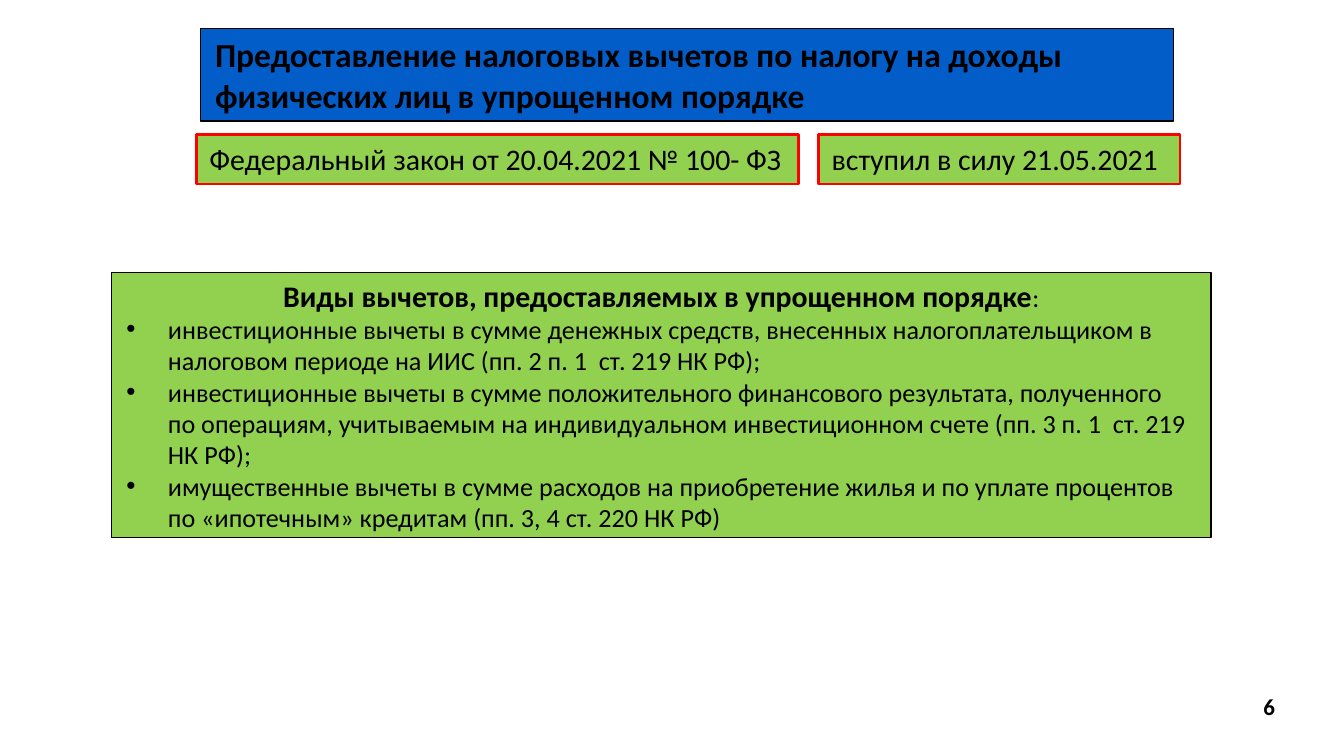
import pptx
import pptx.dml.color
import pptx.enum.shapes
import pptx.enum.text
import pptx.util
from lxml import etree
from pptx.oxml.ns import qn

Inches = pptx.util.Inches
Pt = pptx.util.Pt
RGBColor = pptx.dml.color.RGBColor
PP_ALIGN = pptx.enum.text.PP_ALIGN
MSO_ANCHOR = pptx.enum.text.MSO_ANCHOR
MSO_AUTO_SIZE = pptx.enum.text.MSO_AUTO_SIZE

BLACK = RGBColor(0x00, 0x00, 0x00)
BLUE = RGBColor(0x03, 0x5D, 0xC9)
GREEN = RGBColor(0x92, 0xD0, 0x50)
RED = RGBColor(0xFF, 0x00, 0x00)

FONT = "Calibri"
WIDE_INSETS = (0.11, 0.06)
INDENT = Inches(0.31)

TITLE = "Предоставление налоговых вычетов по налогу на доходы физических лиц в упрощенном порядке"
LAW = "Федеральный закон от 20.04.2021 № 100- ФЗ"
IN_FORCE = "вступил в силу 21.05.2021"
HEADING = "Виды вычетов, предоставляемых в упрощенном порядке"
DEDUCTIONS = [
    "инвестиционные вычеты в сумме денежных средств, внесенных налогоплательщиком в "
    "налоговом периоде на ИИС (пп. 2 п. 1  ст. 219 НК РФ);",
    "инвестиционные вычеты в сумме положительного финансового результата, полученного "
    "по операциям, учитываемым на индивидуальном инвестиционном счете (пп. 3 п. 1  ст. 219 НК РФ);",
    "имущественные вычеты в сумме расходов на приобретение жилья и по уплате процентов "
    "по «ипотечным» кредитам (пп. 3, 4 ст. 220 НК РФ)",
]


def set_values(target, values):
    for name, value in values.items():
        setattr(target, name, value)


def place(shape, box):
    lengths = [Inches(length) for length in box]
    set_values(shape, dict(zip(("left", "top", "width", "height"), lengths)))


def paint(shape, fill, line, line_width):
    shape.fill.solid()
    shape.fill.fore_color.rgb = fill
    shape.line.color.rgb = line
    shape.line.width = Pt(line_width)


def set_frame(frame, insets, anchor=MSO_ANCHOR.MIDDLE, auto_size=MSO_AUTO_SIZE.NONE):
    across, down = (Inches(inset) for inset in insets)
    set_values(frame, {
        "word_wrap": True, "auto_size": auto_size, "vertical_anchor": anchor,
        "margin_left": across, "margin_right": across,
        "margin_top": down, "margin_bottom": down,
    })


def add_span(para, text, size, bold=False):
    span = para.add_run()
    span.text = text
    set_values(span.font, {"name": FONT, "size": Pt(size), "bold": bold})
    span.font.color.rgb = BLACK


def add_bullet(para):
    properties = para._p.get_or_add_pPr()
    properties.set("marL", str(INDENT))
    properties.set("indent", str(-INDENT))
    etree.SubElement(properties, qn("a:buFont"), typeface="Arial")
    etree.SubElement(properties, qn("a:buChar"), char="•")


def add_panel(page, box, line, line_width):
    panel = page.shapes.add_shape(
        pptx.enum.shapes.MSO_SHAPE.RECTANGLE, *(Inches(length) for length in box))
    panel.shadow.inherit = False
    paint(panel, GREEN, line, line_width)
    return panel


def format_title(page, box):
    title = page.shapes.title
    place(title, box)
    paint(title, BLUE, BLACK, 0.75)
    set_frame(title.text_frame, WIDE_INSETS)
    para = title.text_frame.paragraphs[0]
    para.alignment = PP_ALIGN.LEFT
    add_span(para, TITLE, 18, bold=True)


def add_law_label(page, box, text):
    frame = add_panel(page, box, RED, 1.5).text_frame
    set_frame(frame, (0.1, 0.05), MSO_ANCHOR.TOP, MSO_AUTO_SIZE.SHAPE_TO_FIT_TEXT)
    para = frame.paragraphs[0]
    para.alignment = PP_ALIGN.LEFT
    add_span(para, text, 16)


def add_deductions(page, box):
    frame = add_panel(page, box, BLACK, 0.75).text_frame
    set_frame(frame, WIDE_INSETS)
    heading = frame.paragraphs[0]
    heading.alignment = PP_ALIGN.CENTER
    add_span(heading, HEADING, 16, bold=True)
    add_span(heading, ":", 14)
    for deduction in DEDUCTIONS:
        para = frame.add_paragraph()
        para.alignment = PP_ALIGN.LEFT
        add_bullet(para)
        add_span(para, deduction, 14)


def add_page_number(page, box, number):
    frame = page.shapes.add_textbox(*(Inches(length) for length in box)).text_frame
    set_frame(frame, (0.09, 0.04))
    add_span(frame.paragraphs[0], number, 12.3, bold=True)


def main():
    deck = pptx.Presentation()
    deck.slide_width = Inches(10)
    deck.slide_height = deck.slide_width * 9 // 16
    page = deck.slides.add_slide(deck.slide_layouts.get_by_name("Title Only"))

    add_page_number(page, (9.31, 5.12, 0.4, 0.27), "6")
    format_title(page, (1.49, 0.21, 7.24, 0.69))
    add_deductions(page, (0.83, 2.03, 8.18, 1.97))
    add_law_label(page, (1.46, 1, 4.48, 0.37), LAW)
    add_law_label(page, (6.09, 1, 2.69, 0.37), IN_FORCE)
    deck.save("out.pptx")


if __name__ == "__main__":
    main()
